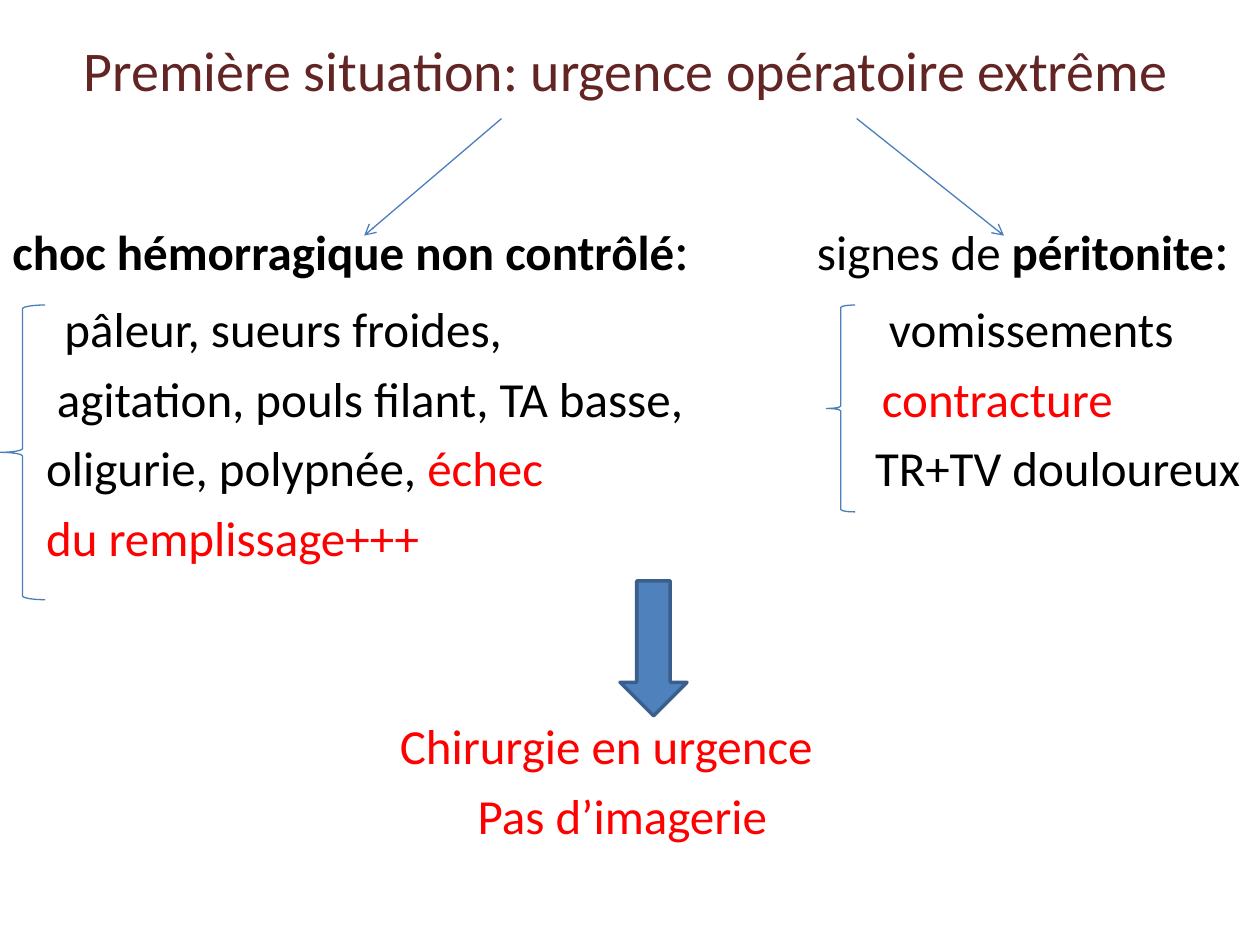
import pptx
import pptx.dml.color
import pptx.enum.shapes
import pptx.enum.text
import pptx.oxml
import pptx.oxml.ns
import pptx.util

Cm = pptx.util.Cm
Pt = pptx.util.Pt
RGBColor = pptx.dml.color.RGBColor
MSO_SHAPE = pptx.enum.shapes.MSO_SHAPE
PP_ALIGN = pptx.enum.text.PP_ALIGN
MSO_ANCHOR = pptx.enum.text.MSO_ANCHOR

FONT = "Calibri"
BROWN = RGBColor(0x63, 0x25, 0x23)
BLACK = RGBColor(0, 0, 0)
RED = RGBColor(0xFF, 0, 0)
LINE_BLUE = RGBColor(0x4B, 0x7E, 0xBC)
FILL_BLUE = RGBColor(0x4F, 0x81, 0xBD)
EDGE_BLUE = RGBColor(0x3A, 0x5F, 0x8C)


def add_run(paragraph, text, color=BLACK, size=28, bold=False):
    run = paragraph.add_run()
    run.text = text
    run.font.name = FONT
    run.font.size = Pt(size)
    run.font.bold = bold
    run.font.color.rgb = color


def add_text_frame(slide, left, top, width, height):
    frame = slide.shapes.add_textbox(Cm(left), Cm(top), Cm(width), Cm(height)).text_frame
    frame.word_wrap = True
    frame.margin_left = frame.margin_right = frame.margin_top = frame.margin_bottom = 0
    return frame


def add_indented_paragraph(frame, indent, space_before):
    paragraph = frame.add_paragraph()
    paragraph.space_before = Pt(space_before)
    paragraph._p.get_or_add_pPr().set("marL", str(Cm(indent)))
    return paragraph


def add_title(slide, left, top, width, height):
    frame = add_text_frame(slide, left, top, width, height)
    frame.vertical_anchor = MSO_ANCHOR.MIDDLE
    title = frame.paragraphs[0]
    title.alignment = PP_ALIGN.CENTER
    add_run(title, "Première situation: urgence opératoire extrême", BROWN, 32)


def add_branch_arrow(slide, start_x, end_x, top, bottom):
    arrow = slide.shapes.add_connector(
        pptx.enum.shapes.MSO_CONNECTOR.STRAIGHT,
        Cm(start_x), Cm(top), Cm(end_x), Cm(bottom))
    arrow.line.color.rgb = LINE_BLUE
    arrow.line.width = Pt(0.75)
    tail = pptx.oxml.parse_xml(
        '<a:tailEnd %s type="arrow"/>' % pptx.oxml.ns.nsdecls("a"))
    arrow.line._get_or_add_ln().append(tail)
    arrow._element.spPr.append(
        pptx.oxml.parse_xml("<a:effectLst %s/>" % pptx.oxml.ns.nsdecls("a")))


def add_signs(slide, left, top, width, height, heading, signs, brace):
    """Heading over indented signs; brace is (offset, width, height) in cm."""
    frame = add_text_frame(slide, left, top, width, height)
    for run in heading:
        add_run(frame.paragraphs[0], *run)
    for row, (indent, runs) in enumerate(signs):
        paragraph = add_indented_paragraph(frame, indent, 6 if row else 10)
        for run in runs:
            add_run(paragraph, *run)

    offset, brace_width, brace_height = brace
    bracket = slide.shapes.add_shape(
        MSO_SHAPE.LEFT_BRACE, Cm(left + offset), Cm(top + 1.83),
        Cm(brace_width), Cm(brace_height))
    bracket.shadow.inherit = False
    bracket.fill.background()
    bracket.line.color.rgb = LINE_BLUE
    bracket.line.width = Pt(0.75)


def add_decision(slide, left, top, width, height):
    """Block arrow leading down to the two lines of the decision."""
    arrow = slide.shapes.add_shape(
        MSO_SHAPE.DOWN_ARROW, Cm(left + 4.44), Cm(top), Cm(1.35), Cm(2.72))
    arrow.shadow.inherit = False
    arrow.fill.solid()
    arrow.fill.fore_color.rgb = FILL_BLUE
    arrow.line.color.rgb = EDGE_BLUE
    arrow.line.width = Pt(2)

    frame = add_text_frame(slide, left, top + 2.72, width, height - 2.72)
    add_run(frame.paragraphs[0], "Chirurgie en urgence", RED)
    add_run(add_indented_paragraph(frame, 1.57, 6), "Pas d’imagerie", RED)


def main():
    presentation = pptx.Presentation()
    presentation.slide_width = Cm(25.4)
    presentation.slide_height = Cm(19.05)
    slide = presentation.slides.add_slide(presentation.slide_layouts[6])

    add_title(slide, 1.19, 0, 22.86, 2.77)
    for start_x, end_x in ((17.27, 20.24), (10.11, 7.34)):
        add_branch_arrow(slide, start_x, end_x, 2.39, 4.75)

    add_signs(
        slide, 0.25, 4.32, 15.5, 7.5,
        heading=[("choc hémorragique non contrôlé", BLACK, 28, True), (":", BLACK, 32)],
        signs=[
            (1.05, [("pâleur, sueurs froides,",)]),
            (0.9, [("agitation, pouls filant, TA basse,",)]),
            (0.68, [("oligurie, polypnée, ",), ("échec", RED)]),
            (0.68, [("du remplissage+++", RED)]),
        ],
        brace=(-0.25, 0.91, 5.94))
    add_signs(
        slide, 16.47, 4.32, 8.93, 6,
        heading=[("signes de ",), ("péritonite", BLACK, 28, True), (":", BLACK, 32)],
        signs=[
            (1.45, [("vomissements",)]),
            (1.31, [("contracture", RED)]),
            (1.17, [("TR+TV douloureux",)]),
        ],
        brace=(0.19, 0.58, 4.17))
    add_decision(slide, 8.06, 11.71, 10, 5.6)

    presentation.save("out.pptx")


if __name__ == "__main__":
    main()
